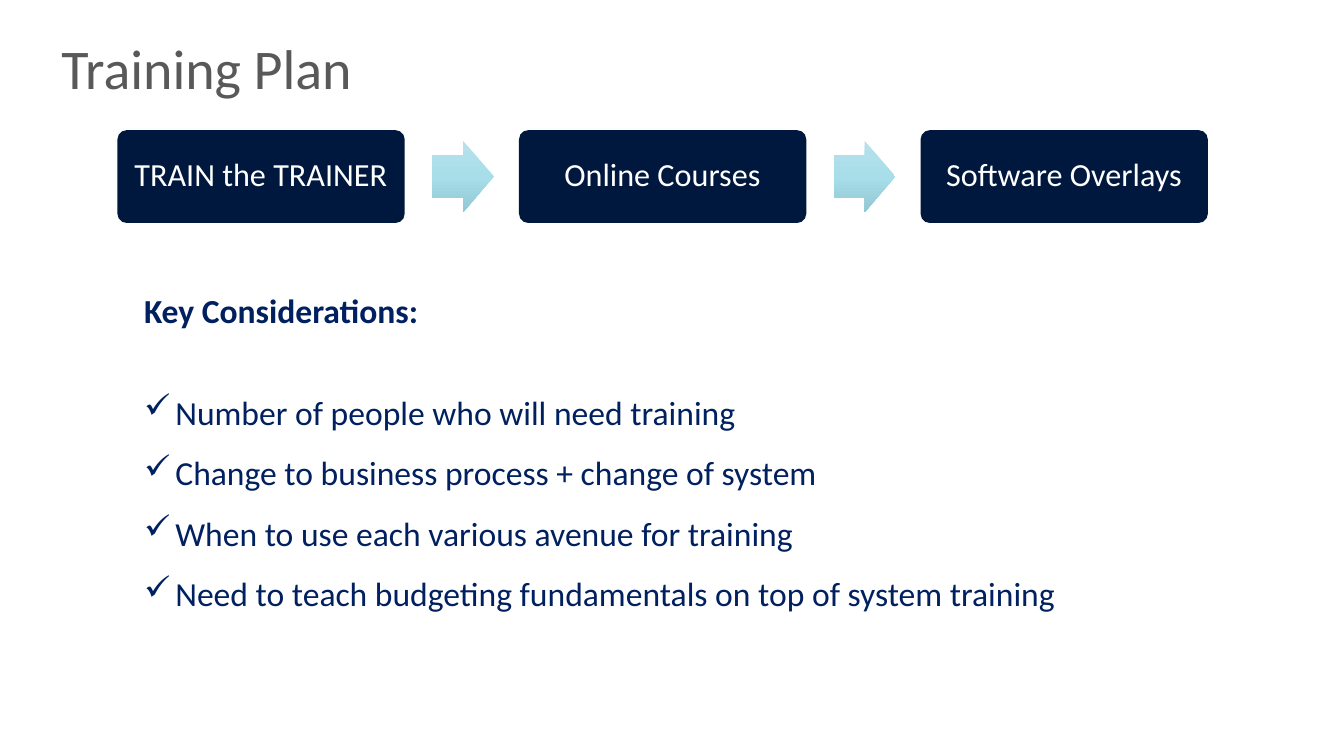
import copy

import lxml.etree
import pptx
import pptx.dml.color
import pptx.enum.shapes
import pptx.enum.text
import pptx.oxml.ns
import pptx.util

Cm = pptx.util.Cm
Pt = pptx.util.Pt
SHAPE = pptx.enum.shapes.MSO_SHAPE
ALIGN = pptx.enum.text.PP_ALIGN
ANCHOR = pptx.enum.text.MSO_ANCHOR
COLORS = {
    "title": "585958", "navy": "00183E", "white": "FFFFFF", "ink": "002060",
    "light": "B6E1EB", "mid": "A8DEEA", "deep": "91C8D4",
}
STEPS = ["TRAIN the TRAINER", "Online Courses", "Software Overlays"]
POINTS = [
    "Number of people who will need training",
    "Change to business process + change of system",
    "When to use each various avenue for training",
    "Need to teach budgeting fundamentals on top of system training",
]


def color(name):
    """Return the named colour."""
    return pptx.dml.color.RGBColor.from_string(COLORS[name])


def style(para, size, tint, bold=False):
    """Set the font of a whole paragraph."""
    font = para.font
    font.name, font.size, font.bold = "Calibri", Pt(size), bold
    font.color.rgb = color(tint)


def frame(slide, left, top, width, height):
    """Add a wrapping text box and return its text frame."""
    box = slide.shapes.add_textbox(Cm(left), Cm(top), Cm(width), Cm(height))
    box.text_frame.word_wrap = True
    return box.text_frame


def shape(slide, kind, left, top, width, height):
    """Add a preset shape without line or shadow."""
    part = slide.shapes.add_shape(kind, Cm(left), Cm(top), Cm(width), Cm(height))
    part.shadow.inherit = False
    part.line.fill.background()
    return part


def title(slide, left, top, width, height):
    """Place the slide title."""
    para = frame(slide, left, top, width, height).paragraphs[0]
    para.text = "Training Plan"
    para.line_spacing = 0.9
    style(para, 40, "title")


def step(slide, text, left, top, width, height):
    """Place one step of the flow."""
    card = shape(slide, SHAPE.ROUNDED_RECTANGLE, left, top, width, height)
    card.adjustments[0] = 0.1
    card.fill.solid()
    card.fill.fore_color.rgb = color("navy")
    body = card.text_frame
    body.word_wrap = True
    body.vertical_anchor = ANCHOR.MIDDLE
    para = body.paragraphs[0]
    para.text = text
    para.alignment = ALIGN.CENTER
    para.line_spacing = 0.9
    style(para, 23, "white")


def arrow(slide, left, top, width, height):
    """Place one shaded arrow between steps."""
    part = shape(slide, SHAPE.RIGHT_ARROW, left, top, width, height)
    part.adjustments[0], part.adjustments[1] = 0.6, 0.5
    part.fill.gradient()
    part.fill.gradient_angle = 270
    stops = part.fill.gradient_stops
    for stop, tint, place in zip(stops, ("light", "deep"), (0, 1)):
        stop.color.rgb = color(tint)
        stop.position = place
    first = part.fill._fill._gradFill.gsLst[0]
    first.addnext(copy.deepcopy(first))
    stop = part.fill.gradient_stops[1]
    stop.color.rgb = color("mid")
    stop.position = 0.5


def flow(slide, left, top, width, height):
    """Spread the steps over the box with arrows in the gaps."""
    card, wide, tall = 7.24, 1.54, 1.8
    pitch = (width - card) / (len(STEPS) - 1)
    for i, text in enumerate(STEPS):
        x = left + i * pitch
        if i:
            arrow(slide, x - 2.18, top + (height - tall) / 2, wide, tall)
        step(slide, text, x, top, card, height)


def check(para):
    """Give a paragraph a hanging check mark."""
    props = para._p.get_or_add_pPr()
    props.set("marL", str(Cm(0.79)))
    props.set("indent", str(-Cm(0.79)))
    mark = lxml.etree.SubElement(props, pptx.oxml.ns.qn("a:buChar"))
    mark.set("char", "✓")


def notes(slide, left, top, width, height):
    """Place the heading and its checked points."""
    body = frame(slide, left, top, width, height)
    head = body.paragraphs[0]
    head.text = "Key Considerations:"
    head.space_after = Pt(29.3)
    style(head, 24, "ink", True)
    for text in POINTS:
        para = body.add_paragraph()
        para.text = text
        check(para)
        para.line_spacing = 1.5
        style(para, 24, "ink")


def main():
    """Build and save the slide."""
    deck = pptx.Presentation()
    deck.slide_width, deck.slide_height = Cm(33.87), Cm(19.05)
    slide = deck.slides.add_slide(deck.slide_layouts[6])
    title(slide, 1.3, 0.91, 31.37, 2.08)
    flow(slide, 2.96, 3.28, 27.48, 2.34)
    notes(slide, 3.38, 7.19, 27.51, 8.46)
    deck.save("out.pptx")


if __name__ == "__main__":
    main()
